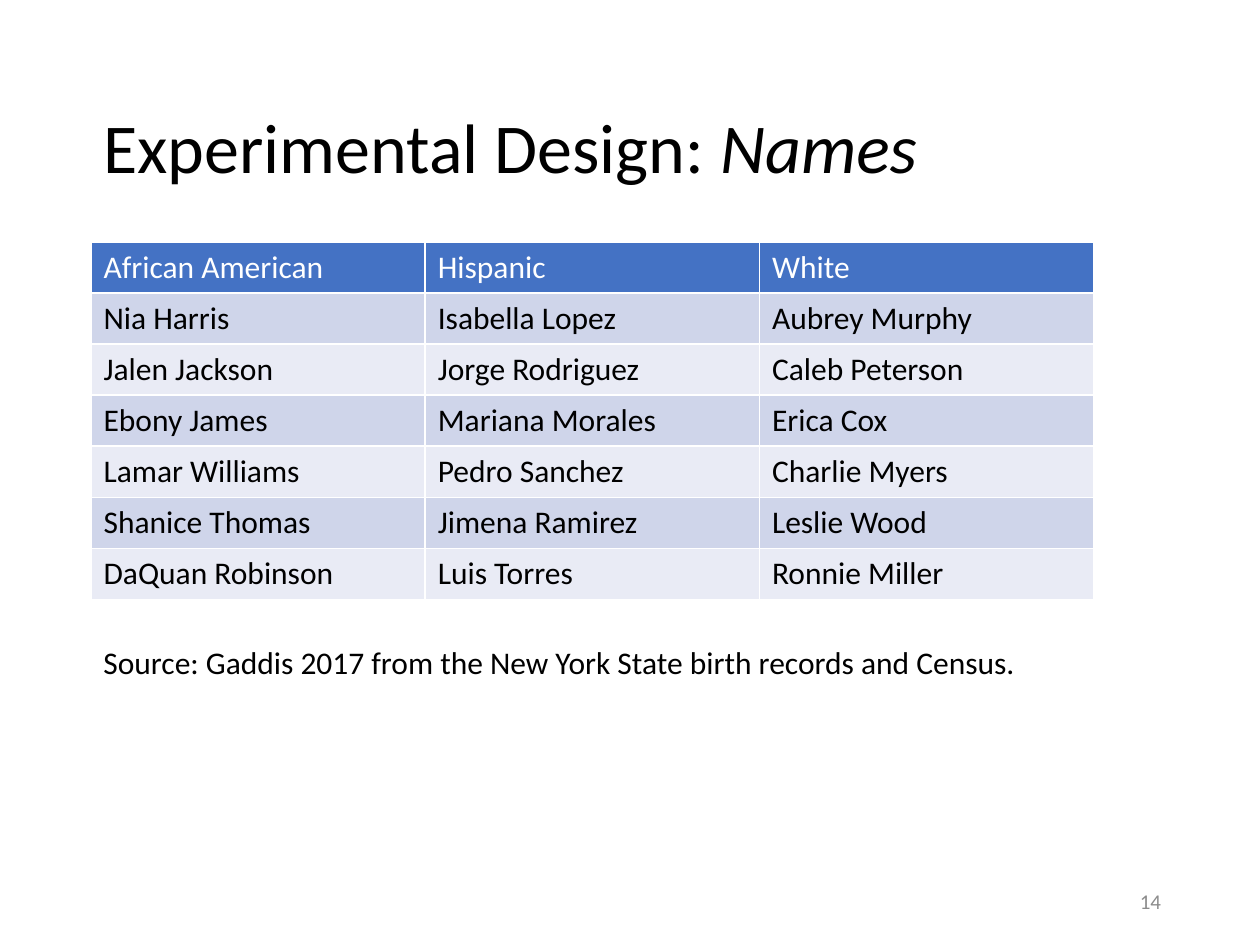
from dataclasses import dataclass

from pptx import Presentation
from pptx.dml.color import RGBColor
from pptx.enum.text import MSO_ANCHOR, MSO_AUTO_SIZE, PP_ALIGN
from pptx.slide import Slide
from pptx.util import Pt

LEFT, RIGHT = PP_ALIGN.LEFT, PP_ALIGN.RIGHT
TOP, MIDDLE = MSO_ANCHOR.TOP, MSO_ANCHOR.MIDDLE
NO_AUTOFIT = MSO_AUTO_SIZE.NONE

BLACK = RGBColor(0x00, 0x00, 0x00)
WHITE = RGBColor(0xFF, 0xFF, 0xFF)
GRAY = RGBColor(0x8C, 0x8C, 0x8C)
HEADER_BLUE = RGBColor(0x44, 0x72, 0xC4)
BAND_FILLS = (RGBColor(0xCF, 0xD5, 0xEA), RGBColor(0xE9, 0xEB, 0xF5))

FONT = "Calibri"
TITLE_ONLY = 5
MARGIN_LEFT = 52
TABLE_TOP, TABLE_WIDTH, ROW_HEIGHT = 138.2, 573, 29.2

NAMES_BY_GROUP = {
    "African American": ("Nia Harris", "Jalen Jackson", "Ebony James",
                         "Lamar Williams", "Shanice Thomas", "DaQuan Robinson"),
    "Hispanic": ("Isabella Lopez", "Jorge Rodriguez", "Mariana Morales",
                 "Pedro Sanchez", "Jimena Ramirez", "Luis Torres"),
    "White": ("Aubrey Murphy", "Caleb Peterson", "Erica Cox",
              "Charlie Myers", "Leslie Wood", "Ronnie Miller"),
}


@dataclass(frozen=True)
class Label:
    text: str
    left: float
    top: float
    width: float
    height: float
    size: float
    color: RGBColor
    alignment: PP_ALIGN = LEFT
    anchor: MSO_ANCHOR = TOP


LABELS = (
    Label("14", 508.5, 500.5, 162, 28.8, 12, GRAY, RIGHT, MIDDLE),
    Label("Source: Gaddis 2017 from the New York State birth records and Census.",
          MARGIN_LEFT, 363.6, 564, 29, 18, BLACK),
)


def format_font(font, size: float, color: RGBColor) -> None:
    font.name = FONT
    font.size = Pt(size)
    font.color.rgb = color
    font.bold = False


def add_title(slide: Slide) -> None:
    title = slide.shapes.title
    title.left, title.top = Pt(MARGIN_LEFT), Pt(34)
    title.width, title.height = Pt(645), Pt(104.4)
    frame = title.text_frame
    frame.auto_size = NO_AUTOFIT
    frame.vertical_anchor = MIDDLE
    paragraph = frame.paragraphs[0]
    paragraph.alignment = LEFT
    paragraph.line_spacing = 0.9
    for text, italic in (("Experimental Design: ", False), ("Names", True)):
        run = paragraph.add_run()
        run.text = text
        format_font(run.font, 40, BLACK)
        run.font.italic = italic


def add_names_table(slide: Slide) -> None:
    rows = [tuple(NAMES_BY_GROUP), *zip(*NAMES_BY_GROUP.values())]
    table = slide.shapes.add_table(
        len(rows), len(NAMES_BY_GROUP), Pt(MARGIN_LEFT), Pt(TABLE_TOP),
        Pt(TABLE_WIDTH), Pt(ROW_HEIGHT * len(rows))).table
    for row_index, row in enumerate(rows):
        is_header = row_index == 0
        fill = HEADER_BLUE if is_header else BAND_FILLS[(row_index - 1) % 2]
        for column_index, text in enumerate(row):
            cell = table.cell(row_index, column_index)
            cell.fill.solid()
            cell.fill.fore_color.rgb = fill
            cell.text_frame.text = text
            format_font(cell.text_frame.paragraphs[0].runs[0].font, 18,
                        WHITE if is_header else BLACK)


def add_label(slide: Slide, label: Label) -> None:
    shape = slide.shapes.add_textbox(Pt(label.left), Pt(label.top),
                                     Pt(label.width), Pt(label.height))
    frame = shape.text_frame
    frame.word_wrap = True
    frame.vertical_anchor = label.anchor
    frame.text = label.text
    paragraph = frame.paragraphs[0]
    paragraph.alignment = label.alignment
    format_font(paragraph.runs[0].font, label.size, label.color)


def main() -> None:
    presentation = Presentation()
    presentation.slide_width, presentation.slide_height = Pt(720), Pt(540)
    slide = presentation.slides.add_slide(presentation.slide_layouts[TITLE_ONLY])
    add_title(slide)
    add_names_table(slide)
    for label in LABELS:
        add_label(slide, label)
    presentation.save("out.pptx")


if __name__ == "__main__":
    main()
